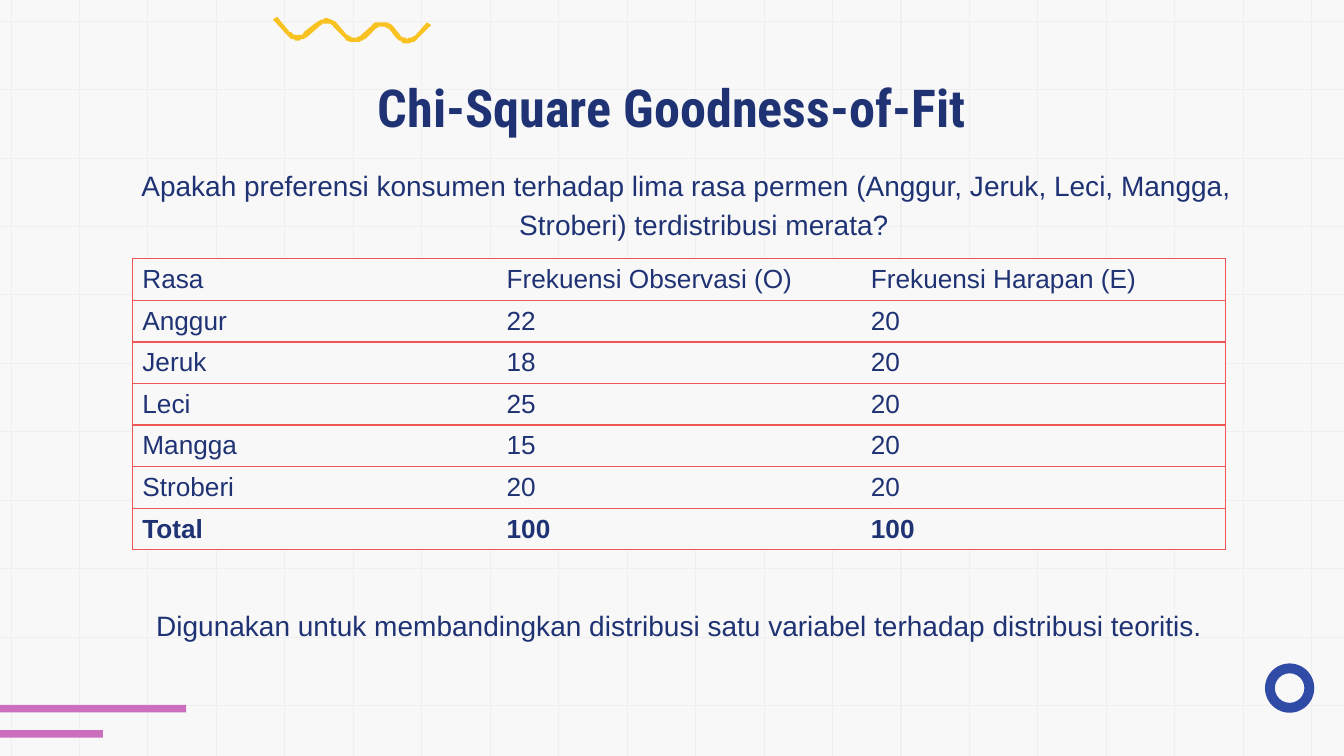
from math import hypot

from lxml.etree import SubElement
from pptx import Presentation
from pptx.dml.color import RGBColor
from pptx.enum.shapes import MSO_CONNECTOR, MSO_SHAPE
from pptx.enum.text import MSO_ANCHOR, PP_ALIGN
from pptx.oxml import parse_xml
from pptx.oxml.ns import nsdecls, qn
from pptx.util import Pt

# Content
TITLE = "Chi-Square Goodness-of-Fit"
QUESTION = ("Apakah preferensi konsumen terhadap lima rasa permen "
            "(Anggur, Jeruk, Leci, Mangga, Stroberi) terdistribusi merata?")
PURPOSE = ("Digunakan untuk membandingkan distribusi satu variabel "
           "terhadap distribusi teoritis.")
FREQUENCIES = [
    ("Rasa", "Frekuensi Observasi (O)", "Frekuensi Harapan (E)"),
    ("Anggur", "22", "20"),
    ("Jeruk", "18", "20"),
    ("Leci", "25", "20"),
    ("Mangga", "15", "20"),
    ("Stroberi", "20", "20"),
    ("Total", "100", "100"),
]

# Colours and measures, in points
PAPER, GRID, NAVY, RED = "F8F8F8", "EFEFEF", "1F3374", "F05555"
PINK, BLUE, YELLOW = "CB6EBE", "304BA6", "F8C220"
WIDTH, HEIGHT = 960, 540
GRID_LEFT, GRID_TOP, GRID_STEP = 7.9, 15.1, 48.9
COLUMN_WIDTH, ROW_HEIGHT = 260.2, 29.6
PINK_BARS = [(503.5, 133), (521.5, 73.5)]  # top, width

# Centre line of the squiggle: one point is a straight part, three are a curve
SQUIGGLE_START = (196.6, 13.3)
SQUIGGLE = [
    [(205.9, 23.8)],
    [(208.1, 25.9), (210.2, 27), (212.4, 27)],
    [(214.9, 27), (216.7, 26.3), (218.5, 24.8)],
    [(227.2, 17.6)],
    [(228.6, 15.8), (230.8, 15.1), (232.9, 15.1)],
    [(236.5, 15.1), (238.7, 16.6), (240.1, 18.4)],
    [(246.2, 25.2)],
    [(248, 27.7), (250.2, 28.4), (252.7, 28.4)],
    [(255.2, 28.4), (257.4, 28.1), (259.6, 26.3)],
    [(266.8, 19.4)],
    [(268.6, 17.6), (270.7, 17.3), (273.6, 17.3)],
    [(276.1, 17.6), (278.6, 18.7), (280.1, 20.5)],
    [(283.7, 25.2)],
    [(285.5, 27.4), (287.6, 29.2), (290.9, 29.2)],
    [(293.4, 29.2), (295.9, 28.1), (298.1, 26.3)],
    [(306.7, 16.9)],
]
HALF_STROKE = 1.7
CURVE_STEPS = 8

prs = Presentation()
prs.slide_width, prs.slide_height = Pt(WIDTH), Pt(HEIGHT)
slide = prs.slides.add_slide(prs.slide_layouts[6])
shapes = slide.shapes


def paint(fill, colour):
    fill.solid()
    fill.fore_color.rgb = RGBColor.from_string(colour)


def style_shape(shape, colour):
    paint(shape.fill, colour)
    shape.line.fill.background()
    shape.shadow.inherit = False


def write(frame, text, size=20, font="Arial", bold=False,
          align=PP_ALIGN.CENTER, spacing=None, hanging=False):
    paragraph = frame.paragraphs[0]
    paragraph.alignment = align
    if spacing:
        paragraph.line_spacing = spacing
    if hanging:
        properties = paragraph._p.get_or_add_pPr()
        properties.set("marL", str(Pt(36)))
        properties.set("indent", str(Pt(-25.2)))
    run = paragraph.add_run()
    run.text = text
    run.font.size, run.font.name, run.font.bold = Pt(size), font, bold
    paint(run.font.fill, NAVY)


def add_text(left, top, width, height, text, inset=3.6,
             anchor=MSO_ANCHOR.MIDDLE, **text_format):
    frame = shapes.add_textbox(Pt(left), Pt(top), Pt(width), Pt(height)).text_frame
    frame.word_wrap = True
    frame.vertical_anchor = anchor
    frame.margin_top = frame.margin_bottom = Pt(inset)
    write(frame, text, **text_format)


def add_grid_line(x1, y1, x2, y2):
    line = shapes.add_connector(MSO_CONNECTOR.STRAIGHT, Pt(x1), Pt(y1), Pt(x2), Pt(y2))
    paint(line.line.fill, GRID)
    line.line.width = Pt(0.75)
    SubElement(line._element.spPr, qn("a:effectLst"))


def set_borders(cell, visible):
    properties = cell._tc.get_or_add_tcPr()
    for index, side in enumerate("LRTB"):
        paint_xml = (f'<a:solidFill><a:srgbClr val="{RED}"/></a:solidFill>'
                     if side in visible else "<a:noFill/>")
        properties.insert(index, parse_xml(
            f'<a:ln{side} {nsdecls("a")} w="{Pt(1)}">{paint_xml}</a:ln{side}>'))


def trace(start, segments):
    """Points along a run of straight parts and cubic curves."""
    points = [start]
    for segment in segments:
        if len(segment) == 1:
            points += segment
            continue
        controls = [points[-1], *segment]
        for step in range(1, CURVE_STEPS + 1):
            t = step / CURVE_STEPS
            weights = ((1 - t) ** 3, 3 * t * (1 - t) ** 2, 3 * t * t * (1 - t), t ** 3)
            points.append(tuple(sum(w * c[axis] for w, c in zip(weights, controls))
                                for axis in (0, 1)))
    return points


def offset(points, distance):
    """Shift each point sideways from its neighbours' direction."""
    shifted = []
    for i, (x, y) in enumerate(points):
        x1, y1 = points[max(i - 1, 0)]
        x2, y2 = points[min(i + 1, len(points) - 1)]
        length = hypot(x2 - x1, y2 - y1)
        shifted.append((x - distance * (y2 - y1) / length,
                        y + distance * (x2 - x1) / length))
    return shifted


# Background grid
paint(slide.background.fill, PAPER)
for row in range(11):
    y = GRID_TOP + row * GRID_STEP
    add_grid_line(0, y, WIDTH, y)
for column in range(20):
    x = GRID_LEFT + column * GRID_STEP
    add_grid_line(x, 0, x, HEIGHT)

# Corner ornaments
for top, width in PINK_BARS:
    bar = shapes.add_shape(MSO_SHAPE.RECTANGLE, 0, Pt(top), Pt(width), Pt(5.4))
    style_shape(bar, PINK)
ring = shapes.add_shape(MSO_SHAPE.DONUT, Pt(903.6), Pt(473.9), Pt(35.2), Pt(35.2))
ring.adjustments[0] = 0.2
style_shape(ring, BLUE)

# Squiggle
centre = trace(SQUIGGLE_START, SQUIGGLE)
outline = offset(centre, HALF_STROKE) + offset(centre, -HALF_STROKE)[::-1]
builder = shapes.build_freeform(*outline[0], scale=Pt(1))
builder.add_line_segments(outline[1:], close=True)
style_shape(builder.convert_to_shape(), YELLOW)

# Title and sentences
add_text(75.6, 46.8, 808.6, 60.5, TITLE, inset=7.2, anchor=MSO_ANCHOR.TOP,
         size=37.3, font="Roboto Condensed", bold=True)
add_text(75.6, 113, 818.6, 63.4, QUESTION, spacing=1.15, hanging=True)
add_text(70.6, 427, 818.6, 35.3, PURPOSE, spacing=1.15, hanging=True)

# Frequency table
rows, columns = len(FREQUENCIES), len(FREQUENCIES[0])
table = shapes.add_table(rows, columns, Pt(94.5), Pt(184.9),
                         Pt(columns * COLUMN_WIDTH), Pt(rows * ROW_HEIGHT)).table
table.first_row = table.horz_banding = False
for column in table.columns:
    column.width = Pt(COLUMN_WIDTH)
for r, record in enumerate(FREQUENCIES):
    table.rows[r].height = Pt(ROW_HEIGHT)
    for c, entry in enumerate(record):
        cell = table.cell(r, c)
        paint(cell.fill, PAPER)
        cell.vertical_anchor = MSO_ANCHOR.MIDDLE
        write(cell.text_frame, entry, size=18.7, bold=r == rows - 1,
              align=PP_ALIGN.LEFT)
        set_borders(cell, "TB" + "L" * (c == 0) + "R" * (c == columns - 1))

prs.save("out.pptx")
